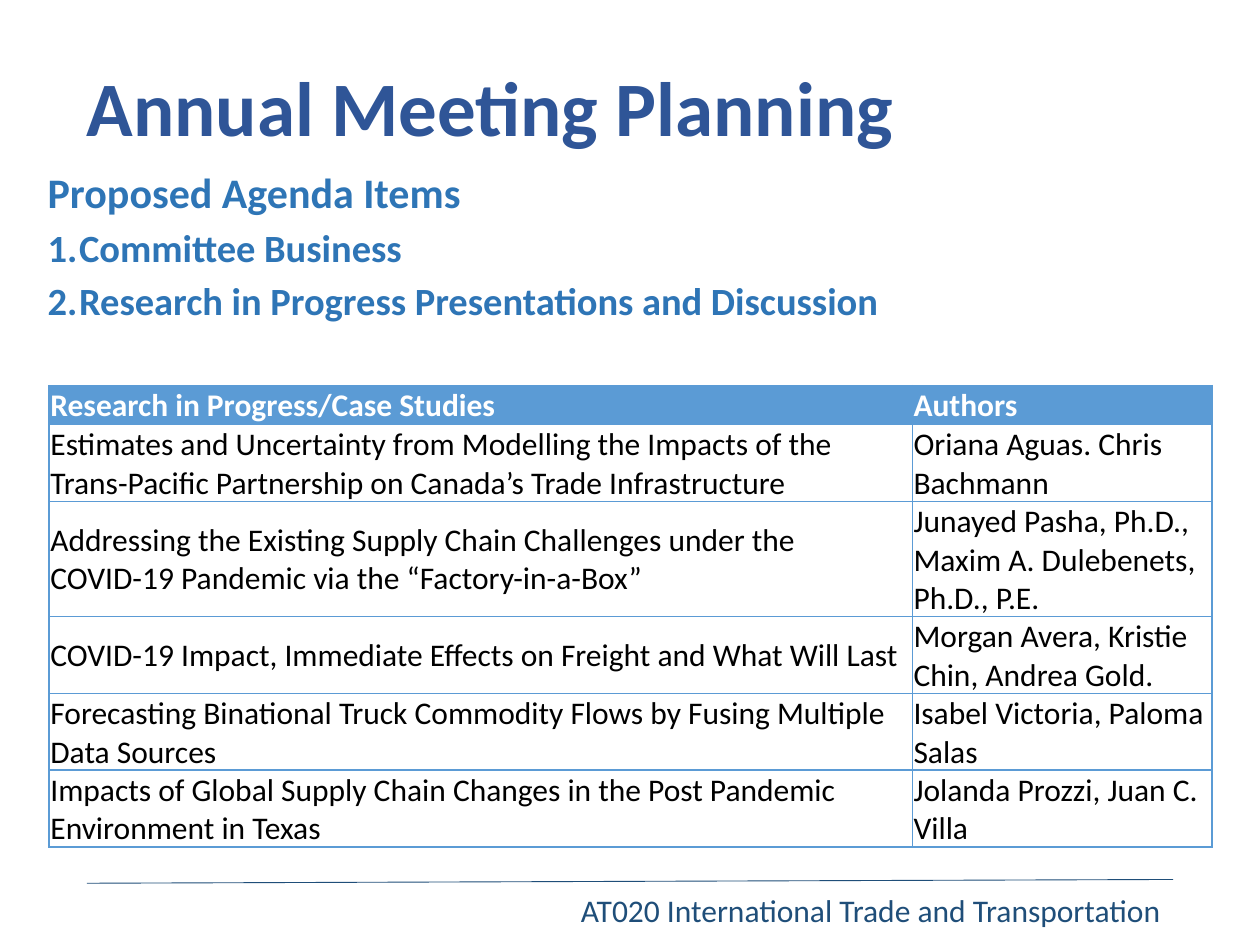
from dataclasses import dataclass
from lxml import etree
from pptx import Presentation
from pptx.dml.color import RGBColor
from pptx.enum.shapes import MSO_CONNECTOR
from pptx.enum.text import MSO_ANCHOR, PP_ALIGN
from pptx.oxml.ns import qn
from pptx.util import Inches, Pt

LEFT, RIGHT = PP_ALIGN.LEFT, PP_ALIGN.RIGHT
TOP, MIDDLE = MSO_ANCHOR.TOP, MSO_ANCHOR.MIDDLE
STRAIGHT = MSO_CONNECTOR.STRAIGHT
COLS, ROWS = 100, 75


@dataclass(frozen=True)
class Theme:
    font: str = "Calibri"
    title: str = "2F5597"
    agenda: str = "2E75B6"
    footer: str = "1F4E79"
    grid: str = "5B9BD5"
    header: str = "FFFFFF"
    body: str = "000000"
    title_size: int = 44
    heading_size: int = 24
    item_size: int = 22
    body_size: int = 18


class Deck:
    def __init__(self, theme):
        self.theme = theme
        self.prs = Presentation()
        self.prs.slide_width, self.prs.slide_height = Inches(10), Inches(7.5)
        self.s = self.prs.slides.add_slide(self.prs.slide_layouts[6])

    def x(self, cols):
        return round(self.prs.slide_width * cols / COLS)

    def y(self, rows):
        return round(self.prs.slide_height * rows / ROWS)

    def box(self, left, top, width, height):
        return self.x(left), self.y(top), self.x(width), self.y(height)

    def run(self, p, text, size, color, bold=False):
        r = p.add_run()
        r.text = text
        r.font.name, r.font.size, r.font.bold = self.theme.font, Pt(size), bold
        r.font.color.rgb = RGBColor.from_string(color)

    def text(self, area, lines, color, bold=False, align=LEFT, anchor=TOP,
             after=0, spacing=1.0):
        tf = self.s.shapes.add_textbox(*self.box(*area)).text_frame
        tf.word_wrap, tf.vertical_anchor = True, anchor
        for i, (text, size, numbered) in enumerate(lines):
            p = tf.add_paragraph() if i else tf.paragraphs[0]
            p.alignment, p.space_after, p.line_spacing = align, Pt(after), spacing
            if numbered:
                self.number(p)
            self.run(p, text, size, color, bold)

    def number(self, p):
        pPr = p._p.get_or_add_pPr()
        indent = self.x(2.5)
        pPr.set("marL", str(indent))
        pPr.set("indent", str(-indent))
        etree.SubElement(pPr, qn("a:buFont"), typeface="+mj-lt")
        etree.SubElement(pPr, qn("a:buAutoNum"), type="arabicPeriod")

    def line(self, start, end, color, width):
        c = self.s.shapes.add_connector(
            STRAIGHT, self.x(start[0]), self.y(start[1]), self.x(end[0]), self.y(end[1]))
        c.line.color.rgb, c.line.width = RGBColor.from_string(color), Pt(width)
        etree.SubElement(c._element.spPr, qn("a:effectLst"))

    def border(self, cell, color, width):
        tcPr = cell._tc.get_or_add_tcPr()
        for side in ("lnL", "lnR", "lnT", "lnB"):
            ln = etree.SubElement(tcPr, qn(f"a:{side}"), w=str(Pt(width)))
            fill = etree.SubElement(ln, qn("a:solidFill"))
            etree.SubElement(fill, qn("a:srgbClr"), val=color)

    def table(self, area, widths, rows, line_counts):
        t = self.theme
        tbl = self.s.shapes.add_table(len(rows), len(widths), *self.box(*area)).table
        tbl.horz_banding = False
        for col, width in zip(tbl.columns, widths):
            col.width = self.x(width)
        for row, count in zip(tbl.rows, line_counts):
            row.height = self.y(area[3] * count / sum(line_counts))
        for i, values in enumerate(rows):
            for j, value in enumerate(values):
                self.cell(tbl.cell(i, j), value, t.header if i == 0 else t.body, i == 0)

    def cell(self, cell, value, color, header):
        t = self.theme
        cell.margin_left = cell.margin_right = cell.margin_top = Inches(0.01)
        cell.margin_bottom = 0
        cell.vertical_anchor = MIDDLE
        self.border(cell, t.grid, 1)
        if header:
            cell.fill.solid()
            cell.fill.fore_color.rgb = RGBColor.from_string(t.grid)
        else:
            cell.fill.background()
        self.run(cell.text_frame.paragraphs[0], value, t.body_size, color, header)


STUDIES = [
    ("Research in Progress/Case Studies", "Authors"),
    ("Estimates and Uncertainty from Modelling the Impacts of the Trans-Pacific "
     "Partnership on Canada’s Trade Infrastructure", "Oriana Aguas. Chris Bachmann"),
    ("Addressing the Existing Supply Chain Challenges under the COVID-19 Pandemic "
     "via the “Factory-in-a-Box”",
     "Junayed Pasha, Ph.D., Maxim A. Dulebenets, Ph.D., P.E."),
    ("COVID-19 Impact, Immediate Effects on Freight and What Will Last",
     "Morgan Avera, Kristie Chin, Andrea Gold."),
    ("Forecasting Binational Truck Commodity Flows by Fusing Multiple Data Sources",
     "Isabel Victoria, Paloma Salas"),
    ("Impacts of Global Supply Chain Changes in the Post Pandemic Environment in Texas",
     "Jolanda Prozzi, Juan C. Villa"),
]


def main():
    t = Theme()
    deck = Deck(t)
    deck.line((6.9, 70.1), (93.1, 69.8), t.footer, 0.5)
    deck.text((5.9, 3.4, 86.2, 10.9), [("Annual Meeting Planning", t.title_size, False)],
              t.title, bold=True, anchor=MIDDLE, spacing=0.9)
    deck.text((42.5, 70.2, 50.6, 4),
              [("AT020 International Trade and Transportation", t.body_size, False)],
              t.footer, align=RIGHT)
    deck.text((2.8, 12.7, 97.2, 20.4), [
        ("Proposed Agenda Items", t.heading_size, False),
        ("Committee Business", t.item_size, True),
        ("Research in Progress Presentations and Discussion", t.item_size, True),
    ], t.agenda, bold=True, after=4)
    deck.table((3.9, 30.6, 92.3, 36.5), (68.5, 23.8), STUDIES, (1, 2, 3, 2, 2, 2))
    deck.prs.save("out.pptx")


if __name__ == "__main__":
    main()
